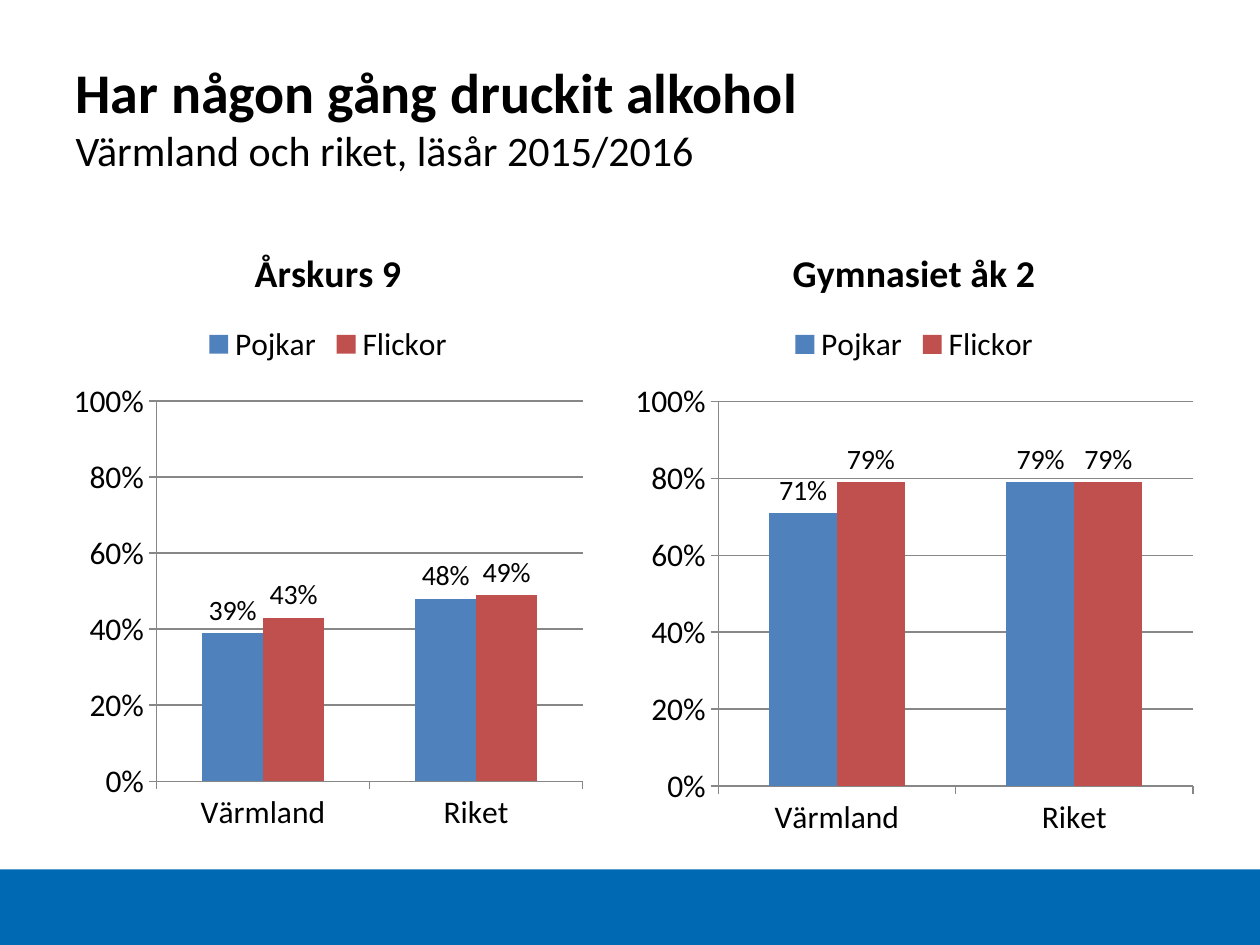
from dataclasses import dataclass

from pptx import Presentation
from pptx.chart.data import CategoryChartData
from pptx.dml.color import RGBColor as Rgb
from pptx.enum.chart import XL_CHART_TYPE as ChartType
from pptx.enum.chart import XL_LABEL_POSITION as LabelPosition
from pptx.enum.chart import XL_LEGEND_POSITION as LegendPosition
from pptx.enum.chart import XL_TICK_MARK as TickMark
from pptx.enum.shapes import MSO_SHAPE as Shape
from pptx.enum.text import MSO_ANCHOR as Anchor
from pptx.enum.text import MSO_AUTO_SIZE as AutoSize
from pptx.enum.text import PP_ALIGN as Align
from pptx.util import Pt


@dataclass(frozen=True)
class Theme:
    font: str = "Calibri"
    text: Rgb = Rgb(0, 0, 0)
    band: Rgb = Rgb(0x00, 0x69, 0xB4)
    grid: Rgb = Rgb(0x87, 0x87, 0x87)
    series: tuple = (Rgb(0x4F, 0x81, 0xBD), Rgb(0xC0, 0x50, 0x4D))
    heading: float = 32
    subheading: float = 24
    chart_title: float = 21.6
    chart_text: float = 18
    label: float = 16


def apply(target, values):
    for name, value in values.items():
        setattr(target, name, value)


class SlideBuilder:
    def __init__(self, slide, theme):
        self.slide = slide
        self.theme = theme

    def style_font(self, font, size, bold=False):
        apply(font, {"name": self.theme.font, "size": Pt(size), "bold": bold})
        font.color.rgb = self.theme.text

    def style_line(self, line):
        line.color.rgb = self.theme.grid
        line.width = Pt(0.75)

    def band(self, left, top, width, height):
        band = self.slide.shapes.add_shape(
            Shape.RECTANGLE, Pt(left), Pt(top), Pt(width), Pt(height))
        band.shadow.inherit = False
        band.fill.solid()
        band.fill.fore_color.rgb = self.theme.band
        band.line.fill.background()

    def title(self, heading, subheading, left, top, width, height):
        box = self.slide.shapes.title
        apply(box, {"left": Pt(left), "top": Pt(top),
                    "width": Pt(width), "height": Pt(height)})
        apply(box.text_frame, {"word_wrap": True, "auto_size": AutoSize.NONE,
                               "vertical_anchor": Anchor.MIDDLE})
        para = box.text_frame.paragraphs[0]
        para.alignment = Align.LEFT
        span = para.add_run()
        span.text = heading
        self.style_font(span.font, self.theme.heading, bold=True)
        para.add_line_break()
        span = para.add_run()
        span.text = subheading
        self.style_font(span.font, self.theme.subheading)

    def column_chart(self, title, categories, series, left, top, width, height):
        data = CategoryChartData(number_format="0%")
        data.categories = categories
        for name, values in series.items():
            data.add_series(name, values)
        chart = self.slide.shapes.add_chart(
            ChartType.COLUMN_CLUSTERED, Pt(left), Pt(top), Pt(width), Pt(height), data).chart
        self.style_font(chart.font, self.theme.chart_text)

        # Chart title and legend
        chart.has_title = True
        frame = chart.chart_title.text_frame
        frame.text = title
        self.style_font(frame.paragraphs[0].runs[0].font, self.theme.chart_title, bold=True)
        chart.has_legend = True
        apply(chart.legend, {"position": LegendPosition.TOP, "include_in_layout": False})

        # Axes
        apply(chart.value_axis, {"minimum_scale": 0, "maximum_scale": 1, "major_unit": 0.2,
                                 "has_major_gridlines": True})
        apply(chart.value_axis.tick_labels,
              {"number_format": "0%", "number_format_is_linked": False})
        self.style_line(chart.value_axis.major_gridlines.format.line)
        for axis in (chart.category_axis, chart.value_axis):
            axis.major_tick_mark = TickMark.OUTSIDE
            self.style_line(axis.format.line)

        # Columns and their labels
        plot = chart.plots[0]
        apply(plot, {"gap_width": 150, "overlap": 0, "vary_by_categories": False})
        for column, color in zip(plot.series, self.theme.series):
            column.format.fill.solid()
            column.format.fill.fore_color.rgb = color
            labels = column.data_labels
            apply(labels, {"show_value": True, "position": LabelPosition.OUTSIDE_END,
                           "number_format": "0%", "number_format_is_linked": False})
            self.style_font(labels.font, self.theme.label)


def main():
    deck = Presentation()
    apply(deck, {"slide_width": Pt(720), "slide_height": Pt(540)})
    page = SlideBuilder(deck.slides.add_slide(deck.slide_layouts[5]), Theme())

    # Footer band and heading
    page.band(0, 496.8, 720, 43.2)
    page.title("Har någon gång druckit alkohol", "Värmland och riket, läsår 2015/2016",
               36, 21.6, 623.5, 90)

    # One chart per school year
    regions = ("Värmland", "Riket")
    page.column_chart("Årskurs 9", regions,
                      {"Pojkar": (0.39, 0.48), "Flickor": (0.43, 0.49)},
                      36, 126, 303, 356.4)
    page.column_chart("Gymnasiet åk 2", regions,
                      {"Pojkar": (0.71, 0.79), "Flickor": (0.79, 0.79)},
                      356.4, 126, 332, 359.3)

    deck.save("out.pptx")


if __name__ == "__main__":
    main()
